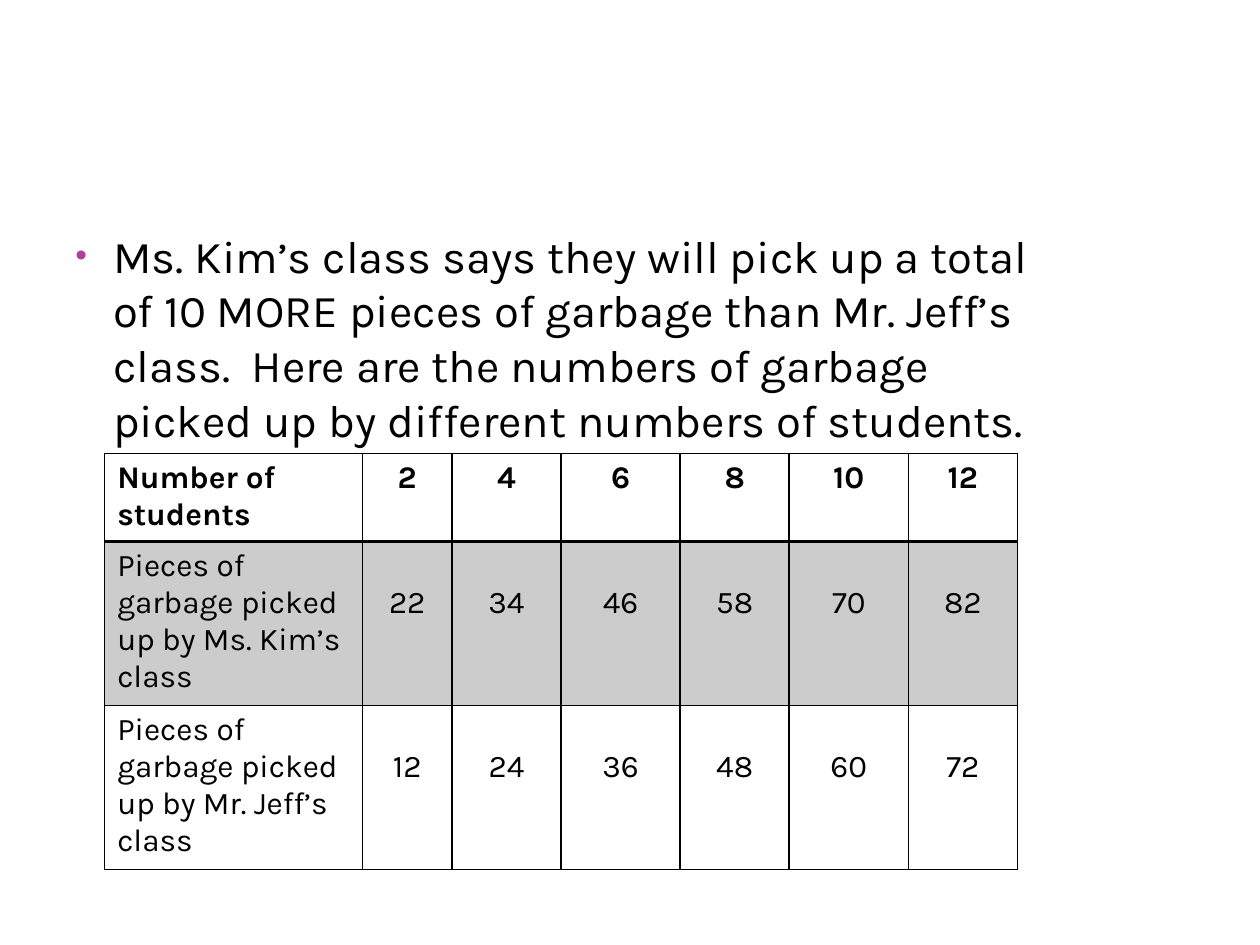
from dataclasses import dataclass

from lxml.etree import SubElement
from pptx import Presentation
from pptx.dml.color import RGBColor
from pptx.enum.text import PP_ALIGN
from pptx.oxml.ns import qn
from pptx.util import Cm, Pt

INTRO = (
    "Ms. Kim’s class says they will pick up a total of 10 MORE pieces of garbage "
    "than Mr. Jeff’s class.  Here are the numbers of garbage picked up by "
    "different numbers of students."
)
ROWS = [
    ("Number of students", 2, 4, 6, 8, 10, 12),
    ("Pieces of garbage picked up by Ms. Kim’s class", 22, 34, 46, 58, 70, 82),
    ("Pieces of garbage picked up by Mr. Jeff’s class", 12, 24, 36, 48, 60, 72),
]
COLUMN_WIDTHS = [5.2, 1.8, 2.2, 2.4, 2.2, 2.4, 2.2]
ROW_HEIGHTS = [1.75, 3.23, 3.23]
NUMBER_DROP = 0.87


@dataclass(frozen=True)
class Theme:
    font: str = "Karla"
    intro_size: float = 26
    table_size: float = 18
    ink: str = "000000"
    bullet: str = "B13F9A"
    paper: str = "FFFFFF"
    shade: str = "CCCCCC"
    thin: float = 1
    thick: float = 2


THEME = Theme()


def style_text(paragraph, size, bold=False):
    for span in paragraph.runs:
        span.font.name = THEME.font
        span.font.size = Pt(size)
        span.font.bold = bold
        span.font.color.rgb = RGBColor.from_string(THEME.ink)


def add_bullet(paragraph):
    properties = paragraph._p.get_or_add_pPr()
    properties.set("marL", str(Cm(0.76)))
    properties.set("indent", str(Cm(-0.76)))
    color = SubElement(properties, qn("a:buClr"))
    SubElement(color, qn("a:srgbClr"), val=THEME.bullet)
    SubElement(properties, qn("a:buSzPct"), val="73000")
    SubElement(properties, qn("a:buFont"), typeface="Arial")
    SubElement(properties, qn("a:buChar"), char="•")


def add_borders(cell, widths):
    properties = cell._tc.get_or_add_tcPr()
    for position, (side, width) in enumerate(widths.items()):
        line = SubElement(properties, qn(f"a:{side}"), w=str(Pt(width)))
        fill = SubElement(line, qn("a:solidFill"))
        SubElement(fill, qn("a:srgbClr"), val=THEME.ink)
        properties.insert(position, line)


def add_intro(page):
    box = page.shapes.add_textbox(Cm(1.27), Cm(4.47), Cm(20.12), Cm(13.46))
    frame = box.text_frame
    frame.word_wrap = True
    frame.text = INTRO
    para = frame.paragraphs[0]
    add_bullet(para)
    style_text(para, THEME.intro_size)


def add_garbage_table(page):
    frame = page.shapes.add_table(
        len(ROWS), len(COLUMN_WIDTHS), Cm(2.11), Cm(9.14),
        Cm(sum(COLUMN_WIDTHS)), Cm(sum(ROW_HEIGHTS)),
    )
    table = frame.table
    for column, width in zip(table.columns, COLUMN_WIDTHS):
        column.width = Cm(width)
    for row, height in zip(table.rows, ROW_HEIGHTS):
        row.height = Cm(height)

    for row_index, values in enumerate(ROWS):
        header = row_index == 0
        for column_index, value in enumerate(values):
            cell = table.cell(row_index, column_index)
            cell.text_frame.text = str(value)
            para = cell.text_frame.paragraphs[0]
            if column_index:
                para.alignment = PP_ALIGN.CENTER
                if not header:
                    cell.margin_top = Cm(NUMBER_DROP)
            style_text(para, THEME.table_size, header)
            cell.fill.solid()
            shade = THEME.shade if row_index == 1 else THEME.paper
            cell.fill.fore_color.rgb = RGBColor.from_string(shade)
            add_borders(cell, {
                "lnL": THEME.thin,
                "lnR": THEME.thin,
                "lnT": THEME.thick if row_index == 1 else THEME.thin,
                "lnB": THEME.thick if header else THEME.thin,
            })


def main():
    deck = Presentation()
    deck.slide_width, deck.slide_height = Cm(25.4), Cm(19.05)
    page = deck.slides.add_slide(deck.slide_layouts[6])
    add_intro(page)
    add_garbage_table(page)
    deck.save("out.pptx")


if __name__ == "__main__":
    main()
